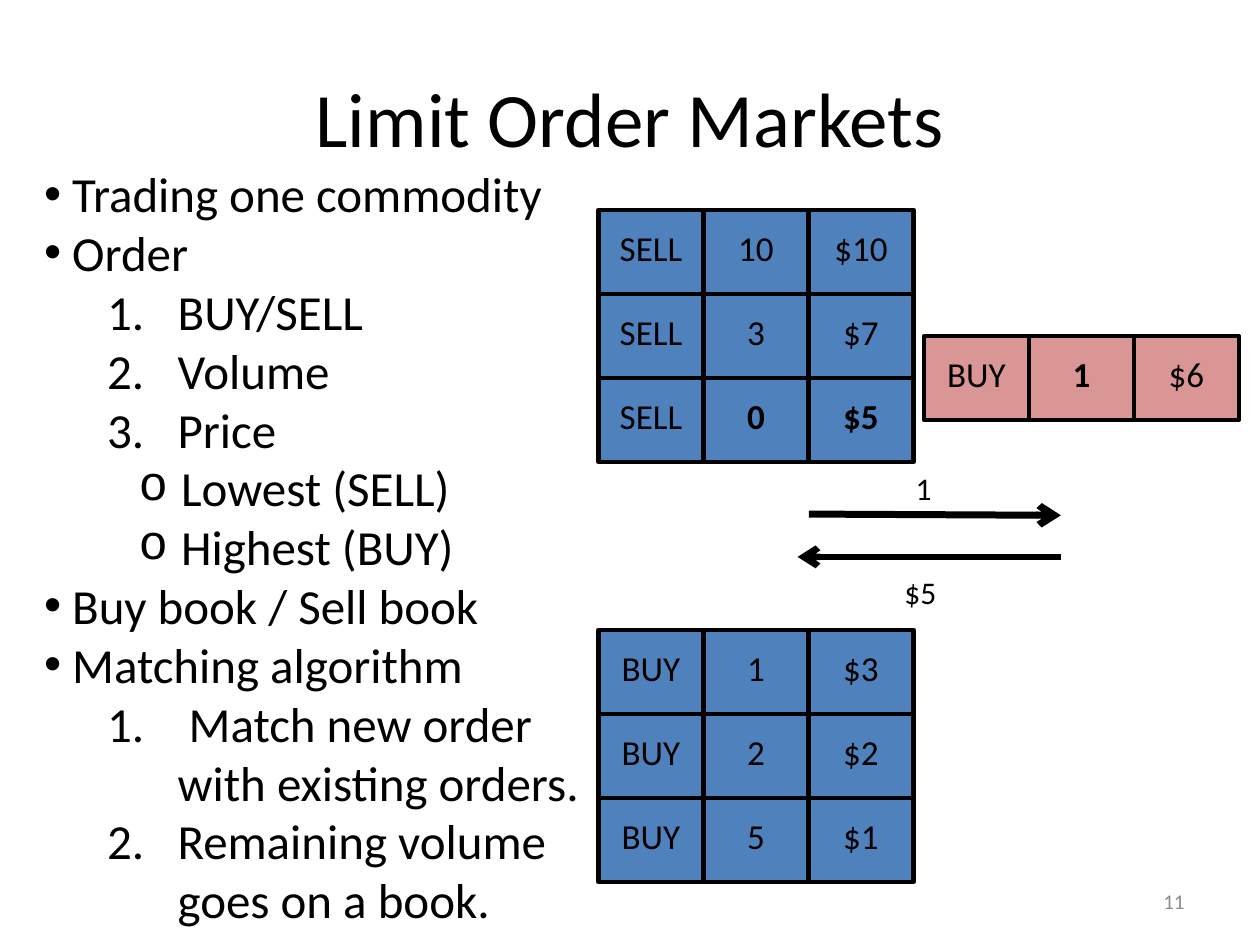
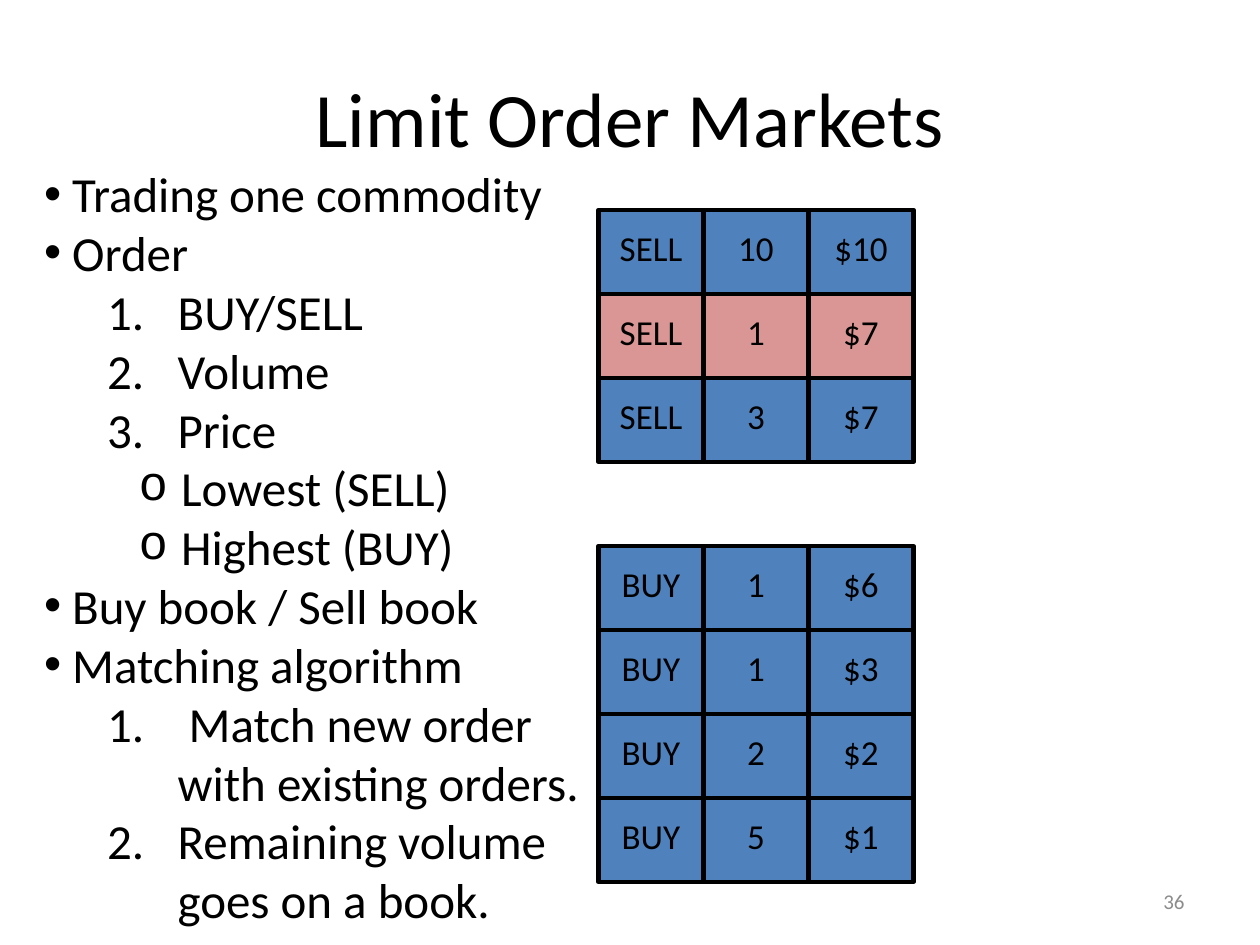
from lxml import etree
from pptx import Presentation
from pptx.dml.color import RGBColor
from pptx.enum import shapes, text
from pptx.oxml.ns import qn
from pptx.util import Inches, Pt

FONT = "Calibri"
BLACK, GREY, BOOK_BLUE, NEW_PINK = "000000", "8C8C8C", "4F81BD", "D99694"
CENTER, LEFT, RIGHT = text.PP_ALIGN.CENTER, text.PP_ALIGN.LEFT, text.PP_ALIGN.RIGHT
GROW = text.MSO_AUTO_SIZE.SHAPE_TO_FIT_TEXT
CELL_WIDTH, ROW_HEIGHT = 5 / 6, 2 / 3
BOOK_LEFT, SELL_TOP = 4.75, 5 / 3

# Kind of list item: level, left margin, first-line indent, bullet tag and attributes
BULLETS = {
    "point": (0, 0, 0, "a:buChar", {"char": "•"}, "Arial"),
    "step": (1, 1.06, -0.56, "a:buAutoNum", {"type": "arabicPeriod"}, FONT),
    "detail": (2, 1, -0.25, "a:buChar", {"char": "o"}, "Courier New"),
}
OUTLINE = [
    ("point", " Trading one commodity"),
    ("point", " Order"),
    ("step", "BUY/SELL"),
    ("step", "Volume"),
    ("step", "Price"),
    ("detail", " Lowest (SELL)"),
    ("detail", " Highest (BUY)"),
    ("point", " Buy book / Sell book"),
    ("point", " Matching algorithm"),
    ("step", " Match new order\vwith existing orders."),
    ("step", "Remaining volume\vgoes on a book."),
]

# Each group of orders: left, top, fills that differ by row, rows; * marks bold
OLD_BUYS = ["BUY 1 $3", "BUY 2 $2", "BUY 5 $1"]
PAGES = [
    {
        "number": "11",
        "groups": [
            (BOOK_LEFT, 5, {}, OLD_BUYS),
            (BOOK_LEFT, SELL_TOP, {}, ["SELL 10 $10", "SELL 3 $7", "SELL *0 *$5"]),
            (22 / 3, 8 / 3, {0: NEW_PINK}, ["BUY *1 $6"]),
        ],
        "arrows": [((6.42, 4.08), (8.42, 4.09), 4), ((8.42, 4.42), (6.33, 4.42), 3.75)],
        "labels": [("1", (7.08, 3.67, 0.5, 0.4), CENTER), ("$5", (7.08, 4.5, 0.5, 0.42), LEFT)],
    },
    {
        "number": "36",
        "groups": [
            (BOOK_LEFT, 5 - ROW_HEIGHT, {}, ["BUY 1 $6"] + OLD_BUYS),
            (BOOK_LEFT, SELL_TOP, {1: NEW_PINK}, ["SELL 10 $10", "SELL 1 $7", "SELL 3 $7"]),
        ],
        "arrows": [],
        "labels": [],
    },
]


def write(box, words, at, size, align=CENTER, colour=BLACK, bold=False):
    """Place a box and fill it with one formatted paragraph."""
    box.left, box.top, box.width, box.height = map(Inches, at)
    frame = box.text_frame
    frame.word_wrap = True
    para = frame.paragraphs[0]
    para.text, para.alignment = words, align
    for name, value in {"name": FONT, "size": Pt(size), "bold": bold}.items():
        setattr(para.runs[0].font, name, value)
    para.runs[0].font.color.rgb = RGBColor.from_string(colour)
    return frame


def add_line(page, start, end, width):
    """Draw a black connector without a shadow."""
    line = page.shapes.add_connector(
        shapes.MSO_CONNECTOR.STRAIGHT, *map(Inches, start + end))
    line.line.color.rgb = RGBColor.from_string(BLACK)
    line.line.width = Pt(width)
    etree.SubElement(line.element.spPr, qn("a:effectLst"))
    return line


deck = Presentation()
deck.slide_width, deck.slide_height = Inches(10), Inches(7.5)

for content in PAGES:
    page = deck.slides.add_slide(deck.slide_layouts[1])
    title, body = page.placeholders
    frame = write(title, "Limit Order Markets", (0.5, 0.3, 9, 1.25), 44)
    frame.vertical_anchor = text.MSO_ANCHOR.MIDDLE

    body.left, body.top, body.width, body.height = map(Inches, (0.25, 1.25, 5.5, 6.53))
    frame = body.text_frame
    frame.auto_size = GROW
    for index, (kind, words) in enumerate(OUTLINE):
        level, margin, indent, tag, marker, marker_font = BULLETS[kind]
        para = frame.add_paragraph() if index else frame.paragraphs[0]
        para.text, para.level, para.space_before = words, level, Pt(0)
        for span in para.runs:
            span.font.name, span.font.size = FONT, Pt(28)
            span.font.color.rgb = RGBColor.from_string(BLACK)
        properties = para._p.get_or_add_pPr()
        properties.set("marL", str(Inches(margin)))
        properties.set("indent", str(Inches(indent)))
        etree.SubElement(properties, qn("a:buFont"), typeface=marker_font)
        etree.SubElement(properties, qn(tag), marker)

    for left, top, fills, orders in content["groups"]:
        for row, order in enumerate(orders):
            row_top = top + row * ROW_HEIGHT
            bar = page.shapes.add_shape(
                shapes.MSO_SHAPE.RECTANGLE,
                *map(Inches, (left, row_top, 3 * CELL_WIDTH, ROW_HEIGHT)))
            bar.shadow.inherit = False
            bar.fill.solid()
            bar.fill.fore_color.rgb = RGBColor.from_string(fills.get(row, BOOK_BLUE))
            bar.line.color.rgb = RGBColor.from_string(BLACK)
            bar.line.width = Pt(2.5)
            for column, value in enumerate(order.split()):
                cell_left = left + column * CELL_WIDTH
                if column:
                    add_line(page, (cell_left, row_top), (cell_left, row_top + ROW_HEIGHT), 2.5)
                cell = page.shapes.add_textbox(0, 0, 0, 0)
                write(cell, value.lstrip("*"), (cell_left, row_top + 0.08, CELL_WIDTH, 0.44),
                      20, bold=value.startswith("*")).auto_size = GROW

    for start, end, width in content["arrows"]:
        arrow = add_line(page, start, end, width)
        outline = arrow.element.spPr.find(qn("a:ln"))
        etree.SubElement(outline, qn("a:tailEnd"), type="arrow")

    for words, at, align in content["labels"]:
        label = page.shapes.add_textbox(0, 0, 0, 0)
        write(label, words, at, 18, align).auto_size = GROW

    number = page.shapes.add_textbox(0, 0, 0, 0)
    frame = write(number, content["number"], (7.17, 6.95, 2.33, 0.4), 12, RIGHT, GREY)
    frame.vertical_anchor = text.MSO_ANCHOR.MIDDLE

deck.save("out.pptx")
